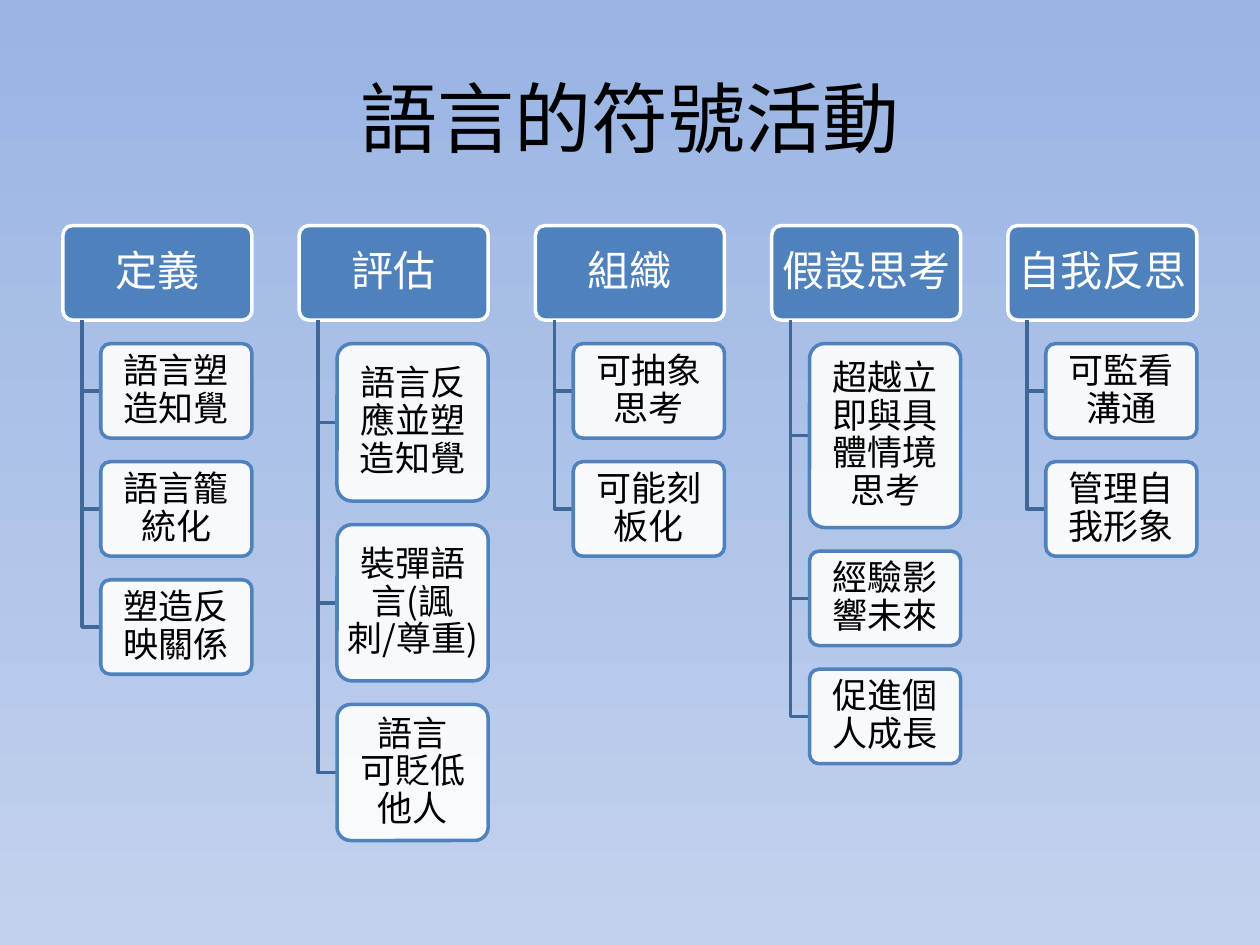
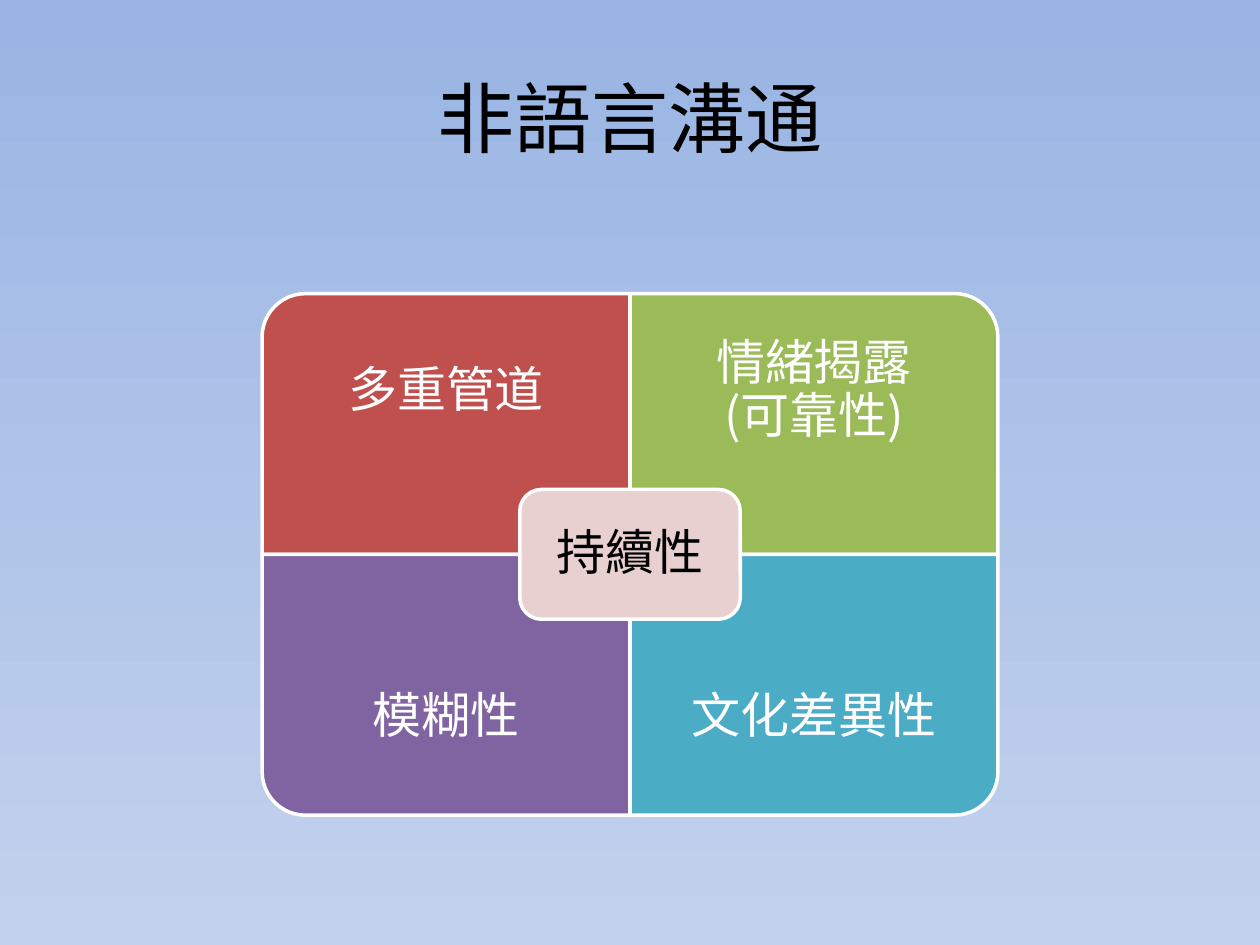
from itertools import product
from lxml.etree import SubElement as Sub
from pptx import Presentation
from pptx.dml.color import RGBColor
from pptx.enum.shapes import MSO_SHAPE as Kind
from pptx.enum.text import MSO_ANCHOR as Anchor, PP_ALIGN as Align
from pptx.oxml.ns import qn
from pptx.util import Inches, Pt

FONT = "Noto Sans CJK SC"
BLACK = RGBColor(0x00, 0x00, 0x00)
WHITE = RGBColor(0xFF, 0xFF, 0xFF)
BLUE = RGBColor(0x4F, 0x81, 0xBD)
NAVY = RGBColor(0x3F, 0x67, 0x97)
RED = RGBColor(0xC0, 0x50, 0x4D)
GREEN = RGBColor(0x9B, 0xBB, 0x59)
PURPLE = RGBColor(0x80, 0x64, 0xA2)
TEAL = RGBColor(0x4B, 0xAC, 0xC6)
ROSE = RGBColor(0xE8, 0xD0, 0xD0)
SKY = (RGBColor(0x9A, 0xB5, 0xE4), RGBColor(0xC2, 0xD1, 0xED))

COLS, ROWS = 100, 75
WIDE, HIGH = Inches(10), Inches(7.5)

LEFT, TOP = 5, 17.9
PITCH, GAP, STEM = 18.75, 1.87, 1.5
HEAD_W, HEAD_H = 15, 7.5
TOPICS = [
    ("定義", [("語言塑造知覺", 7.5), ("語言籠統化", 7.5), ("塑造反映關係", 7.5)]),
    ("評估", [("語言反應並塑造知覺", 12.5), ("裝彈語言(諷刺/尊重)", 12.4),
            ("語言\n可貶低他人", 10.8)]),
    ("組織", [("可抽象思考", 7.5), ("可能刻板化", 7.5)]),
    ("假設思考", [("超越立即與具體情境思考", 14.6), ("經驗影響未來", 7.5),
              ("促進個人成長", 7.5)]),
    ("自我反思", [("可監看溝通", 7.5), ("管理自我形象", 7.5)]),
]

MID_X, MID_Y = 50, 44
QUAD_W, QUAD_H, TEXT_H = 29.2, 20.7, 15.5
CORE_W, CORE_H = 17.5, 10.3
QUADS = [
    ("多重管道", RED, 270),
    ("情緒揭露\n(可靠性)", GREEN, 0),
    ("模糊性", PURPLE, 180),
    ("文化差異性", TEAL, 90),
]


def put_text(shape, text, size=20, color=BLACK, pad=(0.1, 0.05), tight=True):
    frame = shape.text_frame
    frame.word_wrap = True
    frame.vertical_anchor = Anchor.MIDDLE
    frame.margin_left = frame.margin_right = Inches(pad[0])
    frame.margin_top = frame.margin_bottom = Inches(pad[1])
    para = frame.paragraphs[0]
    para.text = text
    para.alignment = Align.CENTER
    if tight:
        para.line_spacing = 0.9
        after = Sub(para._p.get_or_add_pPr(), qn("a:spcAft"))
        Sub(after, qn("a:spcPct"), val="35000")
    for run in para.runs:
        run.font.size = Pt(size)
        run.font.color.rgb = color
        run.font.name = FONT
        Sub(run._r.get_or_add_rPr(), qn("a:ea"), typeface=FONT)


class Deck:
    def __init__(self):
        self.file = Presentation()
        self.file.slide_width, self.file.slide_height = WIDE, HIGH
        self.slide = None

    def place(self, x, y):
        return round(WIDE * x / COLS), round(HIGH * y / ROWS)

    def page(self, title):
        self.slide = self.file.slides.add_slide(self.file.slide_layouts[6])
        fill = self.slide.background.fill
        fill.gradient()
        fill.gradient_angle = 270
        for stop, color in zip(fill.gradient_stops, SKY):
            stop.color.rgb = color
        self.label(title, 5, 3, 90, 12.5, size=44, tight=False)

    def label(self, text, x, y, w, h, **style):
        box = self.slide.shapes.add_textbox(*self.place(x, y), *self.place(w, h))
        put_text(box, text, **style)

    def line(self, shape, color):
        shape.line.color.rgb = color
        shape.line.width = Pt(2)
        shape.shadow.inherit = False

    def box(self, kind, x, y, w, h, fill, edge, round_by=None, alpha=None):
        shape = self.slide.shapes.add_shape(
            kind, *self.place(x, y), *self.place(w, h))
        shape.fill.solid()
        shape.fill.fore_color.rgb = fill
        if alpha:
            tone = shape._element.spPr.find(".//" + qn("a:srgbClr"))
            Sub(tone, qn("a:alpha"), val=str(alpha * 1000))
        if round_by:
            shape.adjustments[0] = round_by
        self.line(shape, edge)
        return shape

    def card(self, text, *area, fill, edge, alpha=None, round_by=0.1, **style):
        shape = self.box(Kind.ROUNDED_RECTANGLE, *area, fill, edge, round_by, alpha)
        put_text(shape, text, **style)

    def elbow(self, x, y, to_x, to_y):
        pen = self.slide.shapes.build_freeform(*self.place(x, y))
        pen.add_line_segments(
            [self.place(x, to_y), self.place(to_x, to_y)], close=False)
        shape = pen.convert_to_shape()
        shape.fill.background()
        self.line(shape, NAVY)

    def topic(self, x, head, items):
        self.card(head, x, TOP, HEAD_W, HEAD_H, fill=BLUE, edge=WHITE,
                  size=24, color=WHITE, pad=(0.05, 0.03))
        base = TOP + HEAD_H
        y = base + GAP
        for text, h in items:
            self.elbow(x + STEM, base, x + 2 * STEM, y + h / 2)
            self.card(text, x + 2 * STEM, y, HEAD_W - 2 * STEM, h, fill=WHITE,
                      edge=BLUE, alpha=90, pad=(0.04, 0.03))
            y += h + GAP

    def quad(self, row, col, text, fill, turn):
        x = MID_X + (col - 1) * QUAD_W
        y = MID_Y + (row - 1) * QUAD_H
        w, h = (QUAD_H, QUAD_W) if turn % 180 else (QUAD_W, QUAD_H)
        shape = self.box(Kind.ROUND_1_RECTANGLE, x + (QUAD_W - w) / 2,
                         y + (QUAD_H - h) / 2, w, h, fill, WHITE)
        shape.rotation = turn
        self.label(text, x, y + row * (QUAD_H - TEXT_H), QUAD_W, TEXT_H,
                   size=28, color=WHITE, pad=(0.22, 0.22))


def main():
    deck = Deck()
    deck.page("語言的符號活動")
    for i, (head, items) in enumerate(TOPICS):
        deck.topic(LEFT + i * PITCH, head, items)

    deck.page("非語言溝通")
    for (row, col), quad in zip(product(range(2), repeat=2), QUADS):
        deck.quad(row, col, *quad)
    deck.card("持續性", MID_X - CORE_W / 2, MID_Y - CORE_H / 2, CORE_W, CORE_H,
              fill=ROSE, edge=WHITE, round_by=None, size=28, pad=(0.12, 0.12))
    deck.file.save("out.pptx")


if __name__ == "__main__":
    main()
